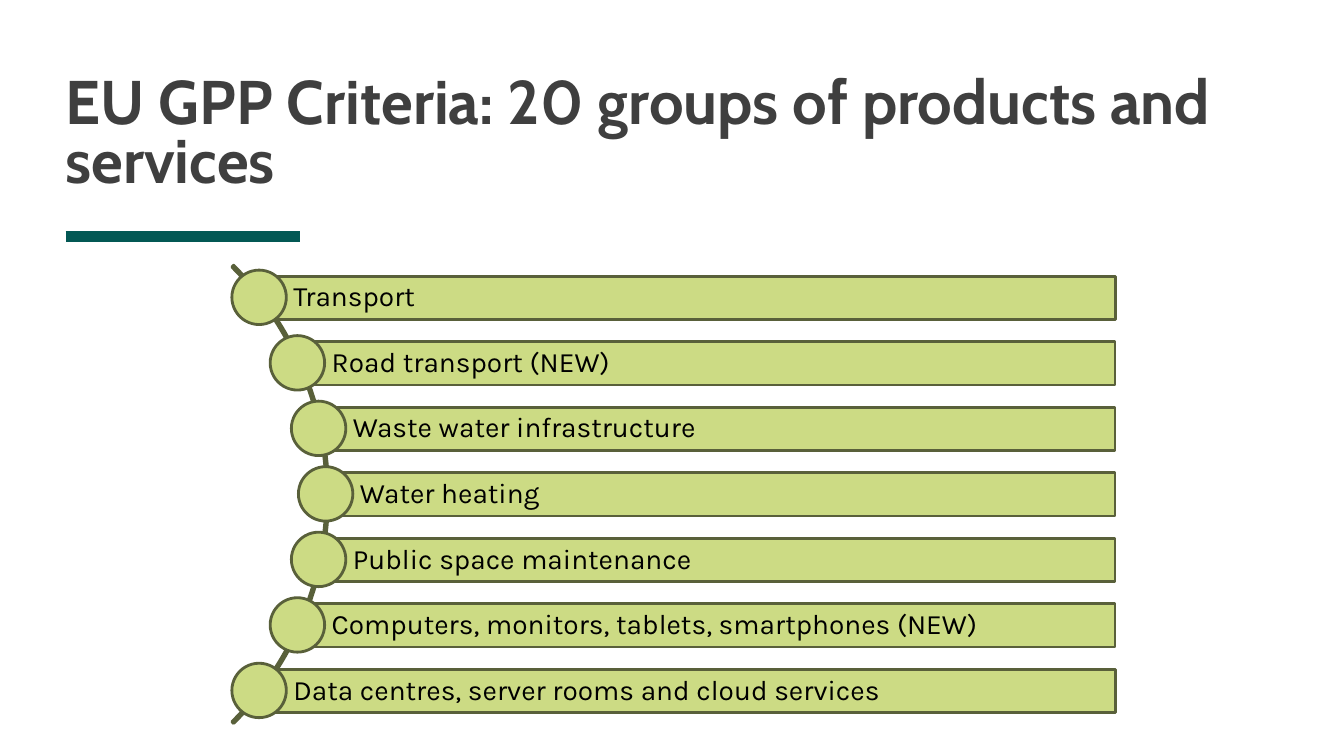
from math import sqrt

from pptx import Presentation
from pptx.dml.color import RGBColor
from pptx.enum.shapes import MSO_CONNECTOR, MSO_SHAPE
from pptx.enum.text import MSO_ANCHOR, PP_ALIGN
from pptx.oxml.ns import qn
from pptx.util import Pt

EMU_PER_PX = 9144
COLORS = {
    "title": "3F3F3F",
    "accent": "035854",
    "fill": "CCDB84",
    "outline": "59603A",
    "text": "000000",
}
GROUPS = [
    "Transport",
    "Road transport (NEW)",
    "Waste water infrastructure",
    "Water heating",
    "Public space maintenance",
    "Computers, monitors, tablets, smartphones (NEW)",
    "Data centres, server rooms and cloud services",
]
BAR_TOP, BAR_PITCH, BAR_HEIGHT, BAR_RIGHT = 274, 65, 43, 1106
DOT_SIZE = 54
ARC_LEFT, ARC_TOP, ARC_SIZE = -317, 169, 643
DOT_CURVE_X, DOT_CURVE_RADIUS = 2, 321


def px(*lengths):
    """Turn pixel lengths into a list of EMU."""
    return [length * EMU_PER_PX for length in lengths]


def color(name):
    """Return the named colour."""
    return RGBColor.from_string(COLORS[name])


def write(shape, wording, font_name, size, color_name, spacing, anchor, insets, bold=False):
    """Fill a shape with one left-aligned, formatted paragraph."""
    frame = shape.text_frame
    frame.word_wrap = True
    frame.vertical_anchor = anchor
    (frame.margin_left, frame.margin_top,
     frame.margin_right, frame.margin_bottom) = px(*insets)
    frame.text = wording
    paragraph = frame.paragraphs[0]
    paragraph.alignment = PP_ALIGN.LEFT
    paragraph.line_spacing = spacing
    font = paragraph.runs[0].font
    font.name, font.size, font.bold = font_name, Pt(size), bold
    font.color.rgb = color(color_name)


def add_outlined(slide, preset, left, top, width, height):
    """Add a green preset shape with a dark outline."""
    shape = slide.shapes.add_shape(preset, *px(left, top, width, height))
    shape.shadow.inherit = False
    shape.fill.solid()
    shape.fill.fore_color.rgb = color("fill")
    shape.line.color.rgb = color("outline")
    shape.line.width = Pt(2)
    return shape


def add_title(slide, wording):
    """Add the heading and the accent rule below it."""
    heading = slide.shapes.add_textbox(*px(65, 22, 1200, 172))
    write(heading, wording, "Cabin", 44, "title", 0.8,
          MSO_ANCHOR.BOTTOM, (0, 0, 0, 0), bold=True)
    rule = slide.shapes.add_connector(MSO_CONNECTOR.STRAIGHT, *px(65, 235, 298, 235))
    rule.line.color.rgb = color("accent")
    rule.line.width = Pt(8)
    properties = rule._element.spPr
    properties.append(properties.makeelement(qn("a:effectLst"), {}))


def add_arc(slide):
    """Add the thin curve that links the dots."""
    arc = add_outlined(slide, MSO_SHAPE.BLOCK_ARC, ARC_LEFT, ARC_TOP, ARC_SIZE, ARC_SIZE)
    for index, value in enumerate((189, 27, 0.004)):
        arc.adjustments[index] = value


def add_group(slide, row, wording):
    """Add one bar with its dot placed along the curve."""
    offset = (row - len(GROUPS) // 2) * BAR_PITCH
    left = DOT_CURVE_X + round(sqrt(DOT_CURVE_RADIUS ** 2 - offset ** 2))
    top = BAR_TOP + row * BAR_PITCH
    bar = add_outlined(slide, MSO_SHAPE.RECTANGLE, left, top, BAR_RIGHT - left, BAR_HEIGHT)
    write(bar, wording, "Karla", 20, "text", 0.9, MSO_ANCHOR.MIDDLE, (34, 6, 6, 6))
    dot_top = top + (BAR_HEIGHT - DOT_SIZE) // 2
    add_outlined(slide, MSO_SHAPE.OVAL, left - DOT_SIZE // 2, dot_top, DOT_SIZE, DOT_SIZE)


def main():
    """Build and save the slide."""
    presentation = Presentation()
    presentation.slide_width, presentation.slide_height = px(1333, 750)
    slide = presentation.slides.add_slide(presentation.slide_layouts[6])
    add_title(slide, "EU GPP Criteria: 20 groups of products and services")
    add_arc(slide)
    for row, wording in enumerate(GROUPS):
        add_group(slide, row, wording)
    presentation.save("out.pptx")


if __name__ == "__main__":
    main()
